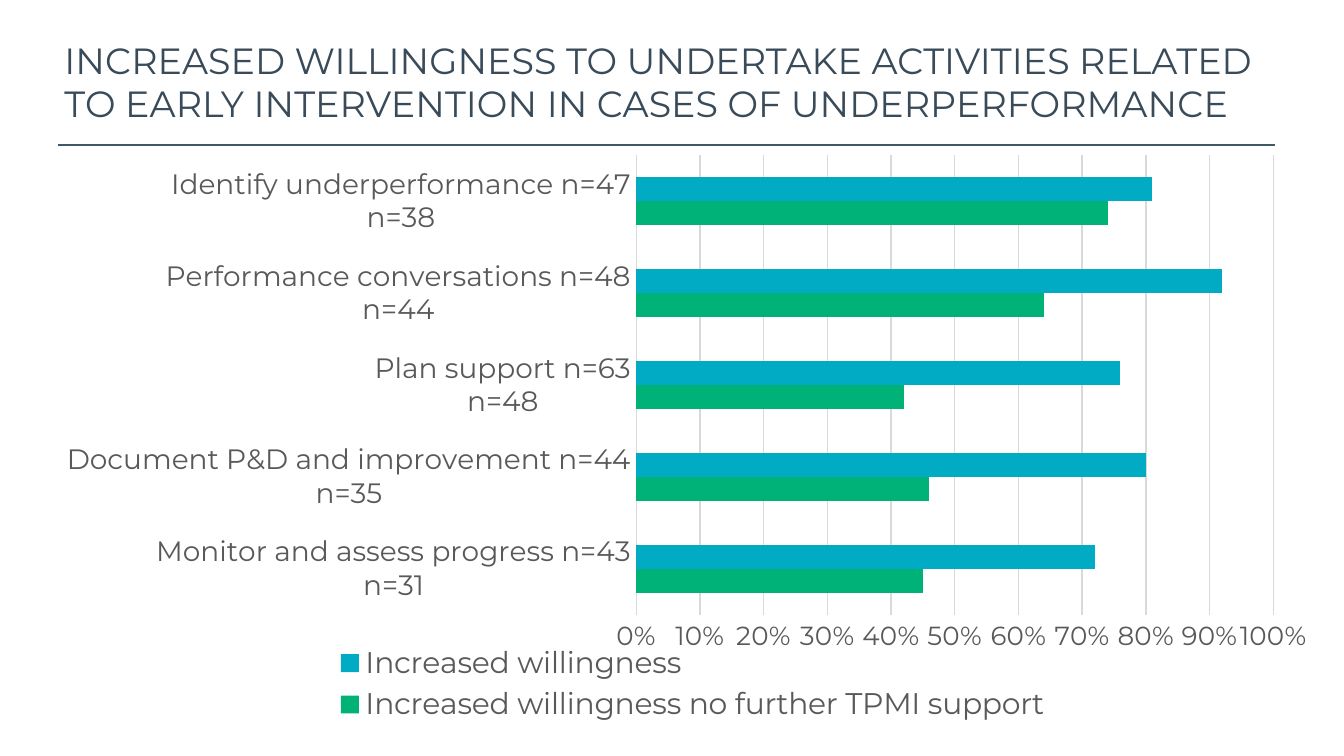
from dataclasses import dataclass

from lxml import etree
from pptx import Presentation
from pptx import util as u
from pptx.chart import data as chart_data
from pptx.dml.color import RGBColor
from pptx.enum import chart as ch, shapes, text
from pptx.oxml.ns import qn


@dataclass(frozen=True)
class Theme:
    font: str = "Montserrat"
    title: str = "394A59"
    rule: str = "425968"
    label: str = "595959"
    grid: str = "D9D9D9"
    with_support: str = "00ABC3"
    without_support: str = "00B178"
    title_size: float = 19.5
    category_size: float = 15
    percent_size: float = 14
    legend_size: float = 16


theme = Theme()


def style_font(font, size, color):
    font.name = theme.font
    font.size = u.Pt(size)
    font.color.rgb = RGBColor.from_string(color)


def place(parent, before, x, y, w, h, inner=False):
    layout = parent.find(qn("c:layout"))
    if layout is None:
        layout = etree.Element(qn("c:layout"))
        parent.insert(before, layout)
    manual = etree.SubElement(layout, qn("c:manualLayout"))
    settings = [("layoutTarget", "inner")] if inner else []
    settings += [("xMode", "edge"), ("yMode", "edge"), ("x", x), ("y", y), ("w", w), ("h", h)]
    for tag, value in settings:
        etree.SubElement(manual, qn(f"c:{tag}")).set("val", str(value))


prs = Presentation()
prs.slide_width = u.Inches(10)
prs.slide_height = u.Inches(10 * 9 / 16)
slide = prs.slides.add_slide(prs.slide_layouts[6])

rule = slide.shapes.add_connector(
    shapes.MSO_CONNECTOR.STRAIGHT, u.Inches(0.43), u.Inches(1.08), u.Inches(9.49), u.Inches(1.08)
)
rule.line.color.rgb = RGBColor.from_string(theme.rule)
rule.line.width = u.Pt(1)
etree.SubElement(rule._element.spPr, qn("a:effectLst"))

activities = [
    ("Monitor and assess progress", 43, 31, 0.72, 0.45),
    ("Document P&D and improvement", 44, 35, 0.80, 0.46),
    ("Plan support", 63, 48, 0.76, 0.42),
    ("Performance conversations", 48, 44, 0.92, 0.64),
    ("Identify underperformance", 47, 38, 0.81, 0.74),
]
willingness = chart_data.CategoryChartData(number_format="0%")
willingness.categories = [f"{name} n={n}\nn={n_without}" for name, n, n_without, *_ in activities]
willingness.add_series("Increased willingness no further TPMI support", [row[4] for row in activities])
willingness.add_series("Increased willingness", [row[3] for row in activities])

chart = slide.shapes.add_chart(
    ch.XL_CHART_TYPE.BAR_CLUSTERED,
    u.Inches(0.48), u.Inches(1), u.Inches(9.35), u.Inches(4.42), willingness,
).chart
chart.has_title = False
style_font(chart.font, theme.category_size, theme.label)
place(chart._chartSpace.chart.plotArea, 0, 0.455, 0.035, 0.507, 0.774, inner=True)

bars = chart.plots[0]
bars.gap_width = 182
bars.overlap = 0
bars.vary_by_categories = False
for series, color in zip(bars.series, (theme.without_support, theme.with_support)):
    series.format.fill.solid()
    series.format.fill.fore_color.rgb = RGBColor.from_string(color)

activity_axis, percent_axis = chart.category_axis, chart.value_axis
for axis, size in ((activity_axis, theme.category_size), (percent_axis, theme.percent_size)):
    axis.major_tick_mark = axis.minor_tick_mark = ch.XL_TICK_MARK.NONE
    style_font(axis.tick_labels.font, size, theme.label)

percent_axis.minimum_scale = 0
percent_axis.maximum_scale = 1
percent_axis.major_unit = 0.1
percent_axis.tick_labels.number_format = "0%"
percent_axis.tick_labels.number_format_is_linked = False
percent_axis.format.line.fill.background()
percent_axis.has_major_gridlines = True
for line in (activity_axis.format.line, percent_axis.major_gridlines.format.line):
    line.color.rgb = RGBColor.from_string(theme.grid)
    line.width = u.Pt(0.75)

chart.has_legend = True
legend = chart.legend
legend.position = ch.XL_LEGEND_POSITION.BOTTOM
legend.include_in_layout = False
style_font(legend.font, theme.legend_size, theme.label)
place(legend._element, 1, 0.21, 0.85, 0.58, 0.16)

heading = slide.shapes.add_textbox(u.Inches(0.48), u.Inches(0.13), u.Inches(9.17), u.Inches(0.95)).text_frame
heading.word_wrap = True
heading.vertical_anchor = text.MSO_ANCHOR.MIDDLE
heading.margin_left = 0
heading.text = (
    "INCREASED WILLINGNESS TO UNDERTAKE ACTIVITIES RELATED "
    "TO EARLY INTERVENTION IN CASES OF UNDERPERFORMANCE"
)
style_font(heading.paragraphs[0].runs[0].font, theme.title_size, theme.title)

prs.save("out.pptx")
